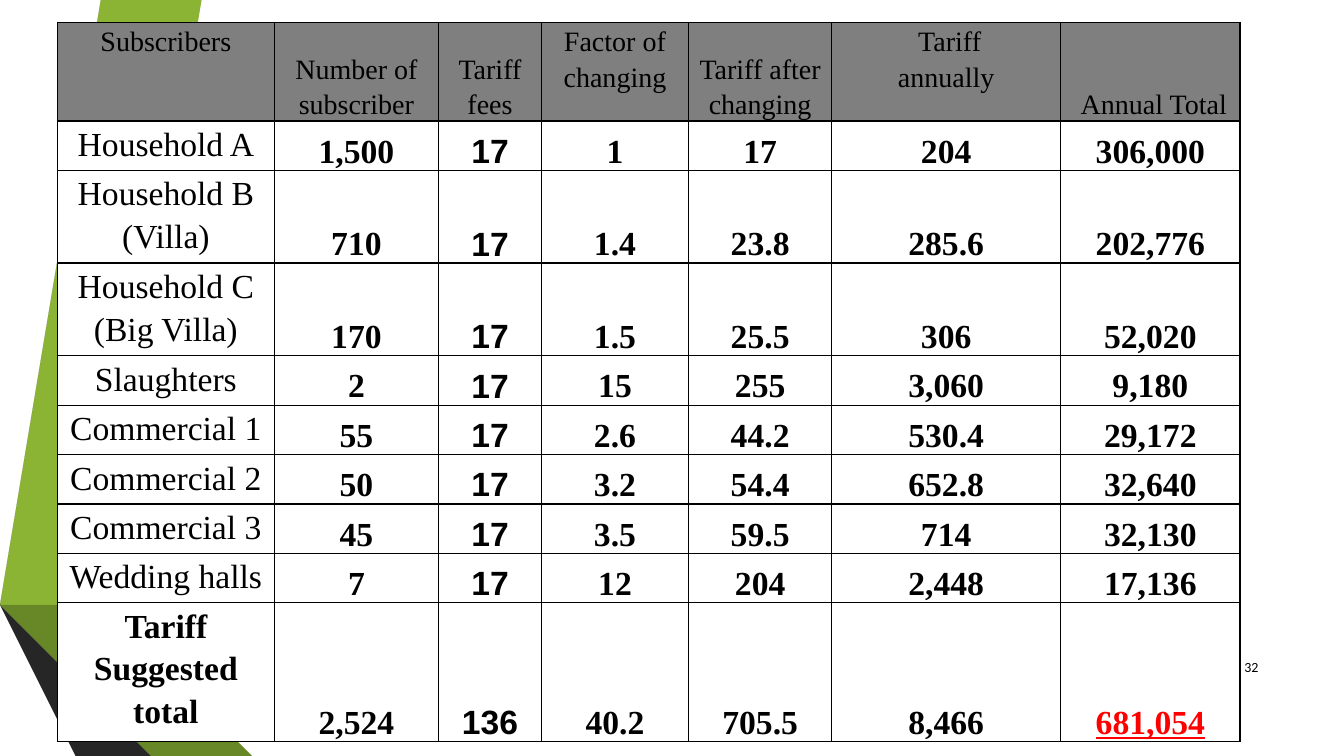
from dataclasses import dataclass

from lxml.etree import SubElement
from pptx import Presentation
from pptx.dml.color import RGBColor
from pptx.enum.text import MSO_ANCHOR, PP_ALIGN
from pptx.oxml.ns import qn
from pptx.util import Inches, Pt


@dataclass(frozen=True)
class Theme:
    black: str = "000000"
    white: str = "FFFFFF"
    red: str = "FF0000"
    gray: str = "7F7F7F"
    lime: str = "8BB434"
    green: str = "688727"
    moss: str = "465A1A"
    slate: str = "595959"
    coal: str = "404040"
    night: str = "262626"
    serif: str = "Times New Roman"
    sans: str = "Calibri"
    digits: str = "Arial"
    head: int = 20
    body: int = 24
    small: int = 10


THEME = Theme()

BANDS = [
    (THEME.lime, [(0.5, 5.78), (0.77, 5.83), (1.73, 0), (1.45, 0)]),
    (THEME.slate, [(1.39, 0), (1.11, 0), (0.16, 5.73), (0.44, 5.77)]),
    (THEME.night, [(0.16, 5.73), (1.45, 7.5), (1.51, 7.5)]),
    (THEME.moss, [(0.5, 5.79), (2.08, 7.5), (2.14, 7.5)]),
    (THEME.green, [(0.5, 5.79), (2.14, 7.5), (2.83, 7.5), (0.77, 5.83), (0.5, 5.78)]),
    (THEME.coal, [(2.02, 7.5), (0.48, 5.83), (0.43, 5.78), (0.44, 5.77),
                  (0.16, 5.73), (1.51, 7.5)]),
]

WIDTHS = [2.15, 1.63, 1.02, 1.46, 1.42, 2.27, 1.78]
HEIGHTS = [0.98, 0.49, 0.92, 0.85] + [0.49] * 5 + [1.27]
LABEL, FEES = 0, 2
TOP_HEADS = (0, 3, 5)

ROWS = [
    ["Subscribers", "Number of subscriber", "Tariff fees", "Factor of changing",
     "Tariff after changing", "Tariff \nannually", "Annual Total "],
    ["Household A", "1,500", "17", "1", "17", "204", "306,000"],
    ["Household B (Villa)", "710", "17", "1.4", "23.8", "285.6", "202,776"],
    ["Household C (Big Villa)", "170", "17", "1.5", "25.5", "306", "52,020"],
    ["Slaughters", "2", "17", "15", "255", "3,060", "9,180"],
    ["Commercial 1", "55", "17", "2.6", "44.2", "530.4", "29,172"],
    ["Commercial 2", "50", "17", "3.2", "54.4", "652.8", "32,640"],
    ["Commercial 3", "45", "17", "3.5", "59.5", "714", "32,130"],
    ["Wedding halls", "7", "17", "12", "204", "2,448", "17,136"],
    ["Tariff Suggested total", "2,524", "136", "40.2", "705.5", "8,466", "681,054"],
]


def write(frame, text, size=THEME.body, face=THEME.serif, color=THEME.black,
          bold=False, under=False, align=PP_ALIGN.CENTER, lead=1.15, after=0,
          rtl=False, script=None):
    for i, line in enumerate(text.split("\n")):
        para = frame.add_paragraph() if i else frame.paragraphs[0]
        para.alignment = align
        para.line_spacing = lead
        para.space_after = Pt(after)
        if rtl:
            para._p.get_or_add_pPr().set("rtl", "1")
        run = para.add_run()
        run.text = line
        font = run.font
        font.size, font.name = Pt(size), face
        font.bold, font.underline = bold, under
        font.color.rgb = RGBColor.from_string(color)
        if script:
            SubElement(font._element, qn("a:cs")).set("typeface", script)


def add_band(slide, color, points):
    build = slide.shapes.build_freeform(*points[0], scale=Inches(1))
    build.add_line_segments(points[1:], close=True)
    band = build.convert_to_shape()
    band.shadow.inherit = False
    band.fill.solid()
    band.fill.fore_color.rgb = RGBColor.from_string(color)
    band.line.fill.background()


def add_edges(cell):
    props = cell._tc.get_or_add_tcPr()
    for side in ("L", "R", "T", "B"):
        edge = SubElement(props, qn(f"a:ln{side}"), w=str(Pt(1)))
        fill = SubElement(edge, qn("a:solidFill"))
        SubElement(fill, qn("a:srgbClr")).set("val", THEME.black)


def style_cell(cell, color, anchor):
    add_edges(cell)
    cell.fill.solid()
    cell.fill.fore_color.rgb = RGBColor.from_string(color)
    cell.vertical_anchor = anchor
    cell.margin_left = cell.margin_right = Inches(0.07)
    cell.margin_top = cell.margin_bottom = 0


def fill_cell(cell, text, row, col):
    head, last = row == 0, row == len(ROWS) - 1
    high = col in TOP_HEADS if head else col == LABEL
    style_cell(cell, THEME.gray if head else THEME.white,
               MSO_ANCHOR.TOP if high else MSO_ANCHOR.BOTTOM)
    if head:
        write(cell.text_frame, text, size=THEME.head, rtl=True)
    elif col == LABEL:
        write(cell.text_frame, text, bold=last, rtl=True)
    elif col == FEES:
        write(cell.text_frame, text, bold=True, rtl=True, script=THEME.digits)
    else:
        grand = last and col == len(WIDTHS) - 1
        write(cell.text_frame, text, bold=True, after=10, under=grand,
              color=THEME.red if grand else THEME.black)


def add_grid(slide):
    frame = slide.shapes.add_table(
        len(ROWS), len(WIDTHS), Inches(0.57), Inches(0.22),
        Inches(sum(WIDTHS)), Inches(sum(HEIGHTS)))
    table = frame.table
    table.horz_banding = False
    for col, width in zip(table.columns, WIDTHS):
        col.width = Inches(width)
    for r, (texts, height) in enumerate(zip(ROWS, HEIGHTS)):
        table.rows[r].height = Inches(height)
        for c, text in enumerate(texts):
            fill_cell(table.cell(r, c), text, r, c)


def add_number(slide, text):
    box = slide.shapes.add_textbox(Inches(11.98), Inches(6.42), Inches(0.6), Inches(0.4))
    frame = box.text_frame
    frame.word_wrap = True
    frame.vertical_anchor = MSO_ANCHOR.MIDDLE
    write(frame, text, size=THEME.small, face=THEME.sans, align=PP_ALIGN.RIGHT, lead=1)


def main():
    deck = Presentation()
    deck.slide_width, deck.slide_height = Inches(13.33), Inches(7.5)
    slide = deck.slides.add_slide(deck.slide_layouts[6])
    for color, points in BANDS:
        add_band(slide, color, points)
    add_number(slide, "32")
    add_grid(slide)
    deck.save("out.pptx")


if __name__ == "__main__":
    main()
